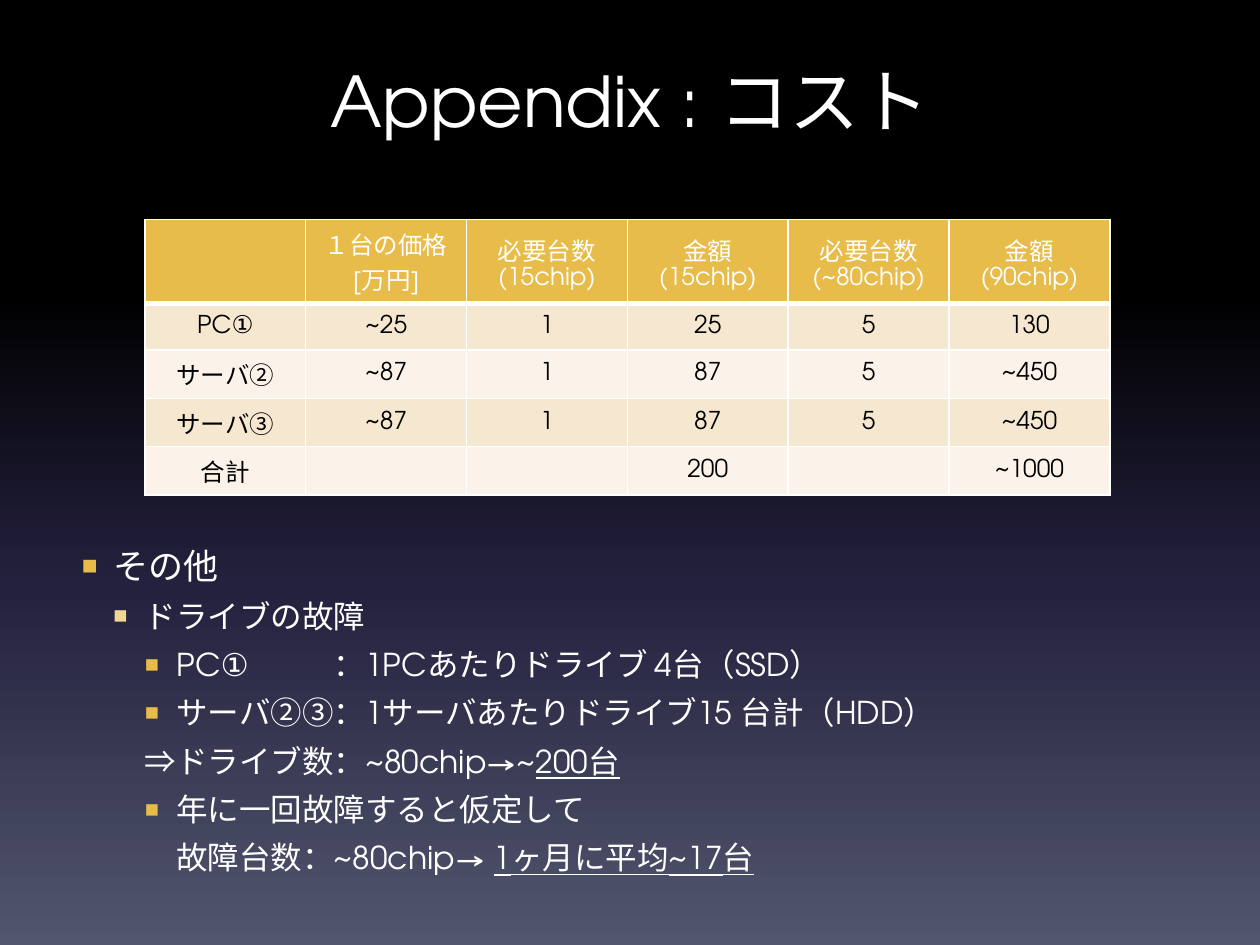
"""Build the appendix slide with the cost table and the drive failure estimate."""
import pptx
import pptx.dml.color
import pptx.enum.text
import pptx.oxml
import pptx.oxml.ns
import pptx.util
from lxml import etree

RGBColor = pptx.dml.color.RGBColor
Inches = pptx.util.Inches
Pt = pptx.util.Pt
qn = pptx.oxml.ns.qn

WHITE = RGBColor(0xFF, 0xFF, 0xFF)
BLACK = RGBColor(0x00, 0x00, 0x00)
GOLD = RGBColor(0xE8, 0xBC, 0x4A)
PALE_GOLD = RGBColor(0xF1, 0xD7, 0x92)
BANDS = [RGBColor(0xFB, 0xF3, 0xE9), RGBColor(0xF6, 0xE7, 0xD0)]
NIGHT = RGBColor(0x24, 0x21, 0x3E)
DUSK = RGBColor(0x51, 0x56, 0x6D)
FONT = "TeX Gyre Adventor"
CENTER = pptx.enum.text.PP_ALIGN.CENTER
MIDDLE = pptx.enum.text.MSO_ANCHOR.MIDDLE


def add_color(parent, color):
    etree.SubElement(parent, qn("a:srgbClr"), val=str(color))


def style(paragraph, size, color):
    paragraph.font.name = FONT
    paragraph.font.size = Pt(size)
    paragraph.font.color.rgb = color


deck = pptx.Presentation()
deck.slide_width, deck.slide_height = Inches(10), Inches(7.5)
slide = deck.slides.add_slide(deck.slide_layouts[1])

backdrop = slide.background.fill
backdrop.gradient()
backdrop.gradient_angle = 270
stops = slide.element.find(".//" + qn("a:gsLst"))
for stop in list(stops):
    stops.remove(stop)
for percent, color in [(0, BLACK), (31, BLACK), (62, NIGHT), (100, DUSK)]:
    add_color(etree.SubElement(stops, qn("a:gs"), pos=str(percent * 1000)), color)

heading = slide.shapes.title
heading.left, heading.top, heading.width, heading.height = map(Inches, (0.5, 0.38, 9, 0.82))
heading.text_frame.text = "Appendix : コスト"
heading.text_frame.vertical_anchor = MIDDLE
heading.text_frame.paragraphs[0].alignment = CENTER
style(heading.text_frame.paragraphs[0], 40, WHITE)

COSTS = [
    ["", "１台の価格[万円]", "必要台数\n(15chip)", "金額\n(15chip)", "必要台数\n(~80chip)", "金額\n(90chip)"],
    ["PC①", "~25", "1", "25", "5", "130"],
    ["サーバ②", "~87", "1", "87", "5", "~450"],
    ["サーバ③", "~87", "1", "87", "5", "~450"],
    ["合計", "", "", "200", "", "~1000"],
]
costs = slide.shapes.add_table(
    len(COSTS), len(COSTS[0]), Inches(1.15), Inches(1.74), Inches(7.66), Inches(2.06)
).table
costs.first_row = costs.horz_banding = False
for row, values in enumerate(COSTS):
    costs.rows[row].height = Inches(0.37 if row else 0.46)
    for column, value in enumerate(values):
        cell = costs.cell(row, column)
        cell.text = value
        cell.vertical_anchor = MIDDLE
        for paragraph in cell.text_frame.paragraphs:
            paragraph.alignment = CENTER
            style(paragraph, 14, BLACK if row else WHITE)
        borders = cell._tc.get_or_add_tcPr()
        for side in ("lnL", "lnR", "lnT", "lnB"):
            points = 3 if row == 0 and side == "lnB" else 1
            edge = etree.SubElement(borders, qn("a:" + side), w=str(Pt(points)))
            add_color(etree.SubElement(edge, qn("a:solidFill")), WHITE)
        cell.fill.solid()
        cell.fill.fore_color.rgb = BANDS[row % 2] if row else GOLD

NOTES = [
    (0, 0.25, GOLD, 20, 20, "その他", ""),
    (1, 0.5, PALE_GOLD, 18, 6, "ドライブの故障", ""),
    (2, 0.75, GOLD, 18, 6, "PC①\t：1PCあたりドライブ 4台（SSD）", ""),
    (2, 0.75, GOLD, 18, 6, "サーバ②③：1サーバあたりドライブ15 台計（HDD）", ""),
    (2, 0.5, None, 18, 6, "⇒ドライブ数：~80chip→~", "200台"),
    (2, 0.75, GOLD, 18, 6, "年に一回故障すると仮定して", ""),
    (3, 0.75, None, 18, 6, "故障台数：~80chip→ ", "1ヶ月に平均~17台"),
]
failures = slide.placeholders[1]
failures.left, failures.top, failures.width, failures.height = map(Inches, (0.55, 4.27, 9, 2.68))
failures.text_frame.auto_size = pptx.enum.text.MSO_AUTO_SIZE.NONE
for index, (level, indent, bullet, size, gap, plain, underlined) in enumerate(NOTES):
    note = failures.text_frame.paragraphs[0] if index == 0 else failures.text_frame.add_paragraph()
    note.level = level
    note.space_before = Pt(gap)
    layout = note._p.get_or_add_pPr()
    layout.set("marL", str(Inches(indent)))
    layout.set("indent", str(Inches(-0.25 if bullet else 0)))
    layout.set("defTabSz", str(Inches(1)))
    if bullet:
        add_color(etree.SubElement(layout, qn("a:buClr")), bullet)
        etree.SubElement(layout, qn("a:buSzPct"), val="75000")
        etree.SubElement(layout, qn("a:buChar"), char="■")
    else:
        etree.SubElement(layout, qn("a:buNone"))
    style(note, size, WHITE)
    note.add_run().text = plain
    if underlined:
        total = note.add_run()
        total.text = underlined
        total.font.underline = True

deck.save("out.pptx")
